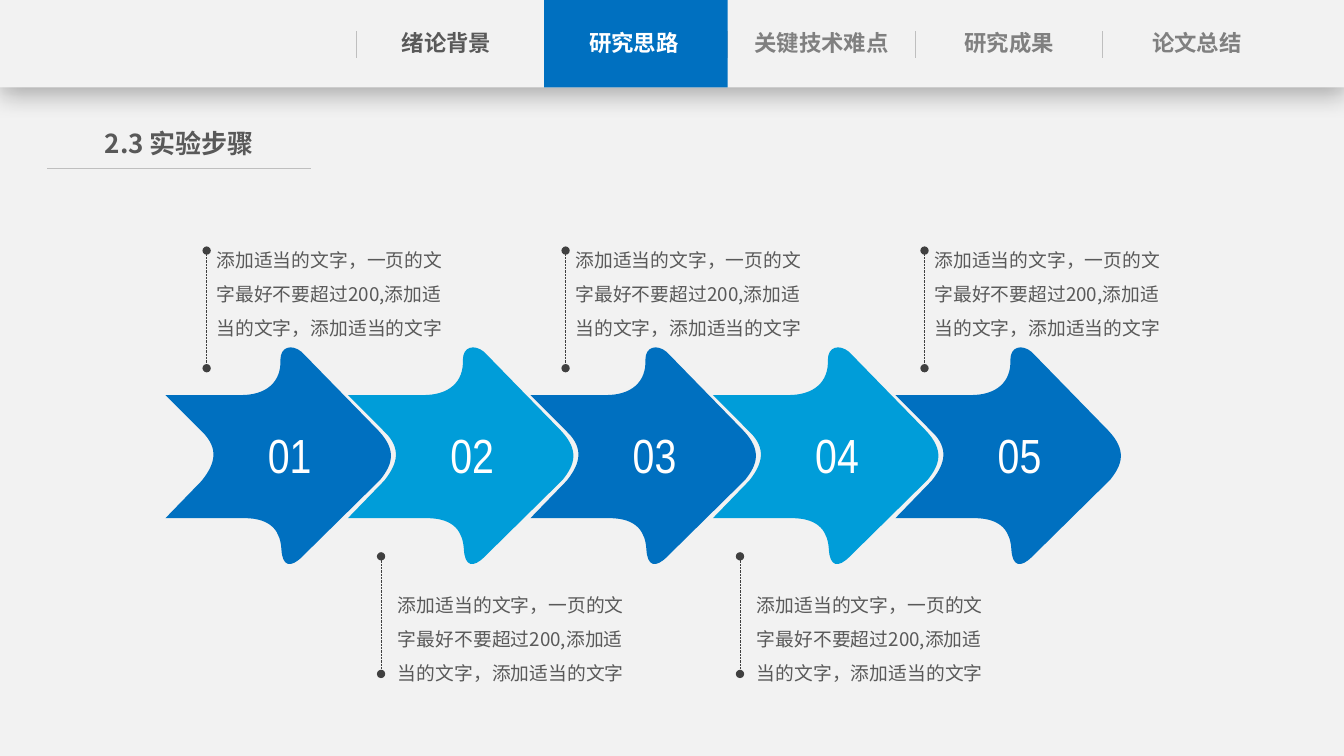
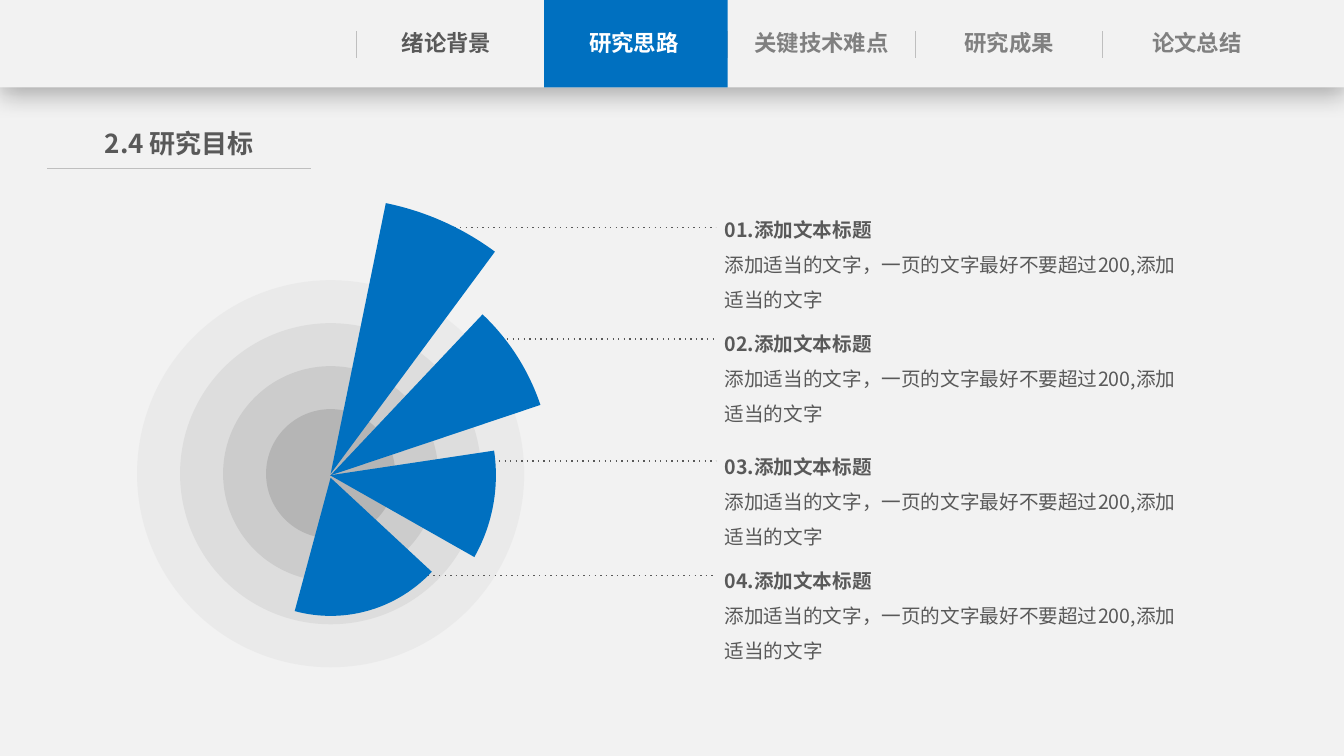
import lxml.etree
import pptx
import pptx.dml.color
import pptx.enum.shapes
import pptx.enum.text
import pptx.oxml.ns
import pptx.util

Pt = pptx.util.Pt
RGB = pptx.dml.color.RGBColor
SHAPE = pptx.enum.shapes.MSO_SHAPE
ALIGN = pptx.enum.text.PP_ALIGN
ANCHOR = pptx.enum.text.MSO_ANCHOR
qn = pptx.oxml.ns.qn

# Colours and fonts
PAPER = RGB(0xF2, 0xF2, 0xF2)
WHITE = RGB(0xFF, 0xFF, 0xFF)
BLUE = RGB(0x00, 0x70, 0xC0)
SKY = RGB(0x00, 0x9D, 0xD9)
INK = RGB(0x59, 0x59, 0x59)
DARK = RGB(0x40, 0x40, 0x40)
MUTED = RGB(0x80, 0x80, 0x80)
RULE = RGB(0xBF, 0xBF, 0xBF)
RINGS = [RGB(0xD9, 0xD9, 0xD9), RULE, RGB(0xA6, 0xA6, 0xA6), MUTED]
HAN = "Noto Sans CJK SC"
SLIM = "Arial Narrow"

# Page and navigation bar
WIDE, HIGH, BAR = 960, 540, 62.4
TABS = [("绪论背景", INK), ("研究思路", WHITE), ("关键技术难点", MUTED),
        ("研究成果", MUTED), ("论文总结", MUTED)]
SPLITS = [254.4, 519.8, 653.8, 787.7]

# Arrow outline: two numbers are a corner, six are a curve
ARROW = [(0, 33.8), (54, 33.8), (72, 33.8, 82.8, 24.5, 82.1, 8.6),
         (82.1, -0.7, 90, -2.9, 97.2, 2.9), (151.9, 59),
         (165.6, 73.4, 162, 83.5, 153.4, 94.3), (97.9, 149),
         (89.3, 157.7, 83.5, 156.2, 82.8, 144),
         (82.1, 132.5, 77, 121.7, 56.2, 121.7), (0, 121.7), (25.9, 95),
         (33.8, 85, 38.9, 74.2, 28.1, 62)]
ARROW_W, ARROW_H = 160.8, 154.8
STEP_NOTE = "添加适当的文字，一页的文字最好不要超过200,添加适当的文字，添加适当的文字"
GOAL_NOTE = "添加适当的文字，一页的文字最好不要超过200,添加适当的文字"


def node(parent, tag, **attrs):
    """Append a drawing element with the given attributes."""
    child = lxml.etree.SubElement(parent, qn(tag))
    for name, value in attrs.items():
        child.set(name, str(value))
    return child


def write(frame, text, size=14, color=INK, font=HAN, bold=False,
          align=ALIGN.LEFT, space=1.0, more=False):
    """Put one formatted paragraph into a text frame."""
    para = frame.add_paragraph() if more else frame.paragraphs[0]
    para.alignment, para.line_spacing = align, space
    run = para.add_run()
    run.text = text
    run.font.size, run.font.bold = Pt(size), bold
    run.font.color.rgb = color
    run.font.name = font
    node(run.font._element, "a:ea", typeface=font)


class Deck:
    """Holds the shared style and the current slide."""

    def __init__(self):
        self.file = pptx.Presentation()
        self.file.slide_width, self.file.slide_height = Pt(WIDE), Pt(HIGH)
        self.layout = self.file.slide_layouts[5]
        self.slide = None

    def page(self, title):
        first = self.slide is None
        self.slide = self.file.slides.add_slide(self.layout)
        if first:
            # The paper belongs to the layout, behind its placeholders
            paper = self.shape(SHAPE.RECTANGLE, 0, 0, WIDE, HIGH, PAPER)
            self.layout.shapes._spTree.insert(2, paper.element)
        head = self.slide.shapes.title
        head.left, head.top, head.width, head.height = map(Pt, (53.6, 87.1, 149, 30.2))
        self.frame(head, 0)
        write(head.text_frame, title, size=18.6, bold=True, align=ALIGN.CENTER)
        self.line(33.8, 120.2, 222.5, 120.2)
        self.menu()

    def menu(self):
        bar = self.shape(SHAPE.RECTANGLE, 0, 0, WIDE, BAR, PAPER)
        glow = node(bar.element.spPr.find(qn("a:effectLst")), "a:outerShdw",
                    blurRad=Pt(18), dist=Pt(4), dir=90 * 60000, algn="t", rotWithShape=0)
        node(node(glow, "a:srgbClr", val="000000"), "a:alpha", val=29000)
        for x in SPLITS:
            self.line(x, 22.3, x, 41.8)
        self.shape(SHAPE.RECTANGLE, 388.6, 0, 131.1, BAR, BLUE)
        for i, (name, color) in enumerate(TABS):
            box = self.box(266 + 134 * i, 17.3, 105.8, 27.4, side=0)
            write(box, name, size=16, color=color, bold=True, align=ALIGN.CENTER)

    def frame(self, shape, side=7.2):
        frame = shape.text_frame
        frame.word_wrap = True
        frame.auto_size = pptx.enum.text.MSO_AUTO_SIZE.NONE
        frame.vertical_anchor = ANCHOR.TOP
        frame.margin_left = frame.margin_right = Pt(side)
        frame.margin_top = frame.margin_bottom = Pt(3.6)
        return frame

    def box(self, x, y, w, h, side=7.2):
        return self.frame(self.slide.shapes.add_textbox(Pt(x), Pt(y), Pt(w), Pt(h)), side)

    def paint(self, shape, color, alpha=None):
        shape.shadow.inherit = False
        shape.fill.solid()
        shape.fill.fore_color.rgb = color
        shape.line.fill.background()
        if alpha:
            tint = shape.element.spPr.find(".//" + qn("a:srgbClr"))
            node(tint, "a:alpha", val=alpha * 1000)
        return shape

    def shape(self, kind, x, y, w, h, color, alpha=None):
        shape = self.slide.shapes.add_shape(kind, Pt(x), Pt(y), Pt(w), Pt(h))
        return self.paint(shape, color, alpha)

    def disc(self, x, y, size, color, kind=SHAPE.OVAL, alpha=None):
        return self.shape(kind, x - size / 2, y - size / 2, size, size, color, alpha)

    def wedge(self, x, y, size, start, end):
        pie = self.disc(x, y, size, BLUE, SHAPE.PIE)
        # Angles are stored in 60000ths, adjustments are scaled by 100000
        for i, angle in enumerate((start, end)):
            pie.adjustments[i] = angle * 0.6

    def arrow(self, x, y, text, color):
        # Frame of the outline, then its corners and curves
        right, low = x + ARROW_W, y + ARROW_H
        pen = self.slide.shapes.build_freeform(Pt(x), Pt(y), scale=1.0)
        pen.add_line_segments([(Pt(right), Pt(y)), (Pt(right), Pt(low)), (Pt(x), Pt(low))])
        shape = self.paint(pen.convert_to_shape(), color)
        track = shape.element.spPr.find(".//" + qn("a:path"))
        for child in list(track):
            track.remove(child)
        for i, step in enumerate(ARROW):
            tag = "a:cubicBezTo" if len(step) > 2 else "a:lnTo" if i else "a:moveTo"
            move = node(track, tag)
            for a, b in zip(step[::2], step[1::2]):
                node(move, "a:pt", x=int(Pt(a)), y=int(Pt(b)))
        node(track, "a:close")
        # Number plate
        plate = self.shape(SHAPE.RECTANGLE, x + 66, y + 51.8, 50.4, 49, color)
        frame = self.frame(plate)
        frame.word_wrap = False
        write(frame, text, size=34.2, color=WHITE, font=SLIM)

    def line(self, x1, y1, x2, y2, color=RULE, width=0.5, dash=None, ends=None):
        line = self.slide.shapes.add_connector(
            pptx.enum.shapes.MSO_CONNECTOR.STRAIGHT, Pt(x1), Pt(y1), Pt(x2), Pt(y2))
        line.line.color.rgb = color
        line.line.width = Pt(width)
        props = line.element.spPr
        stroke = props.get_or_add_ln()
        if dash:
            node(stroke, "a:prstDash", val=dash)
        if ends:
            node(stroke, "a:headEnd", type=ends)
            node(stroke, "a:tailEnd", type=ends)
        node(props, "a:effectLst")


def steps(deck):
    deck.page("2.3 实验步骤")
    # Chain of arrows, the first one on top
    for i in reversed(range(5)):
        deck.arrow(118.2 + 130.35 * i, 248.4, f"{i + 1:02}", SKY if i % 2 else BLUE)
    # Notes above and below: first x, count, line top, text shift, text top
    for left, count, top, shift, head in [(147.6, 3, 179, 0, 166.3),
                                          (272.2, 2, 397.4, 5, 412.6)]:
        for i in range(count):
            x = left + 256.4 * i
            deck.line(x, top + 84, x, top, color=DARK, dash="sysDot", ends="oval")
            write(deck.box(x + shift, head, 182.2, 80.6), STEP_NOTE, size=13.4, space=1.5)


def goals(deck):
    deck.page("2.4 研究目标")
    # Rings
    for i, color in enumerate(RINGS):
        deck.disc(236.2, 338.4, 276.5 - 61.4 * i, color, alpha=30)
    # Leader lines and notes: line start, line height, text top
    rows = [(324.7, 162.7, 143.5), (354.2, 242.2, 225.1),
            (324.7, 329.3, 312.9), (301.7, 411.1, 394.1)]
    for x, y, top in rows:
        deck.line(x, y, 511.2, y, color=INK, width=1, dash="dot")
    for i, (x, y, top) in enumerate(rows, 1):
        note = deck.box(510.5, top, 345.6, 83.5)
        write(note, f"{i:02}.添加文本标题", bold=True, space=1.5)
        write(note, GOAL_NOTE, space=1.5, more=True)
    # Wedges: centre, diameter, start and end angle
    for wedge in [(236.2, 338.4, 394.6, 281.52, 306.49),
                  (236.2, 339.5, 316.1, 313.35, 341.45),
                  (235.8, 339.5, 236.9, 351.45, 29.55),
                  (236.2, 341.3, 197.3, 42.89, 105.07)]:
        deck.wedge(*wedge)


def main():
    deck = Deck()
    steps(deck)
    goals(deck)
    deck.file.save("out.pptx")


if __name__ == "__main__":
    main()
